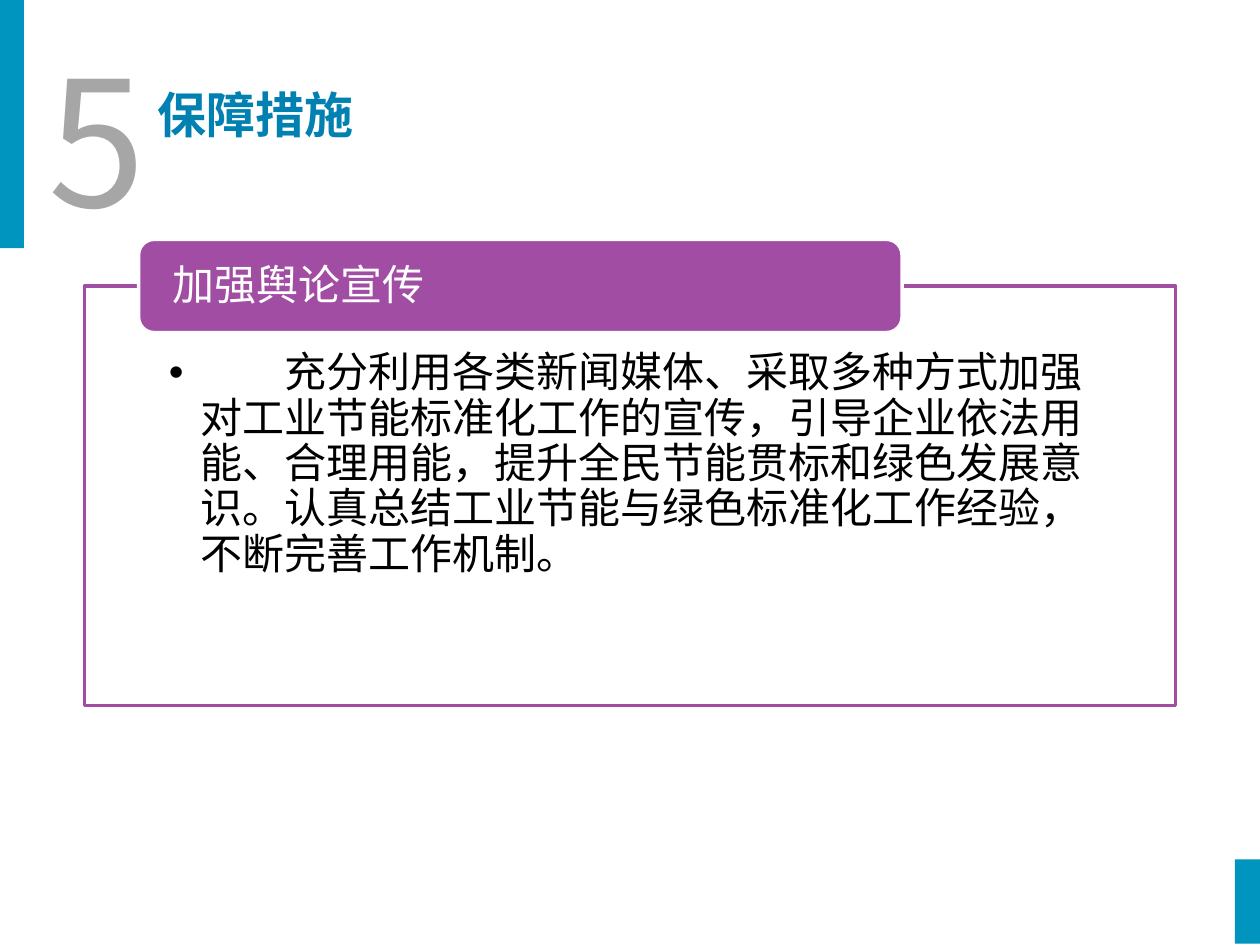
from dataclasses import dataclass

from lxml import etree
from pptx import Presentation
from pptx.dml.color import RGBColor
from pptx.enum import shapes, text
from pptx.oxml.ns import qn
from pptx.util import Inches, Pt


@dataclass(frozen=True)
class Theme:
    teal: str = "0095BE"
    title: str = "0081B2"
    number: str = "A6A6A6"
    purple: str = "A04DA3"
    white: str = "FFFFFF"
    black: str = "000000"
    latin: str = "Calibri"
    cjk: str = "Noto Sans CJK SC"
    number_size: int = 100
    title_size: int = 28
    text_size: int = 24
    line_width: int = 2


THEME = Theme()


def place(shape, box):
    shape.left, shape.top, shape.width, shape.height = map(Inches, box)


def add_block(page, kind, box, fill, line=None):
    block = page.shapes.add_shape(kind, *map(Inches, box))
    block.shadow.inherit = False
    block.fill.solid()
    block.fill.fore_color.rgb = RGBColor.from_string(fill)
    if line:
        block.line.color.rgb = RGBColor.from_string(line)
        block.line.width = Pt(THEME.line_width)
    else:
        block.line.fill.background()
    return block


def set_frame(shape, insets=(0.1, 0.05, 0.1, 0.05), anchor=text.MSO_ANCHOR.TOP):
    frame = shape.text_frame
    frame.word_wrap = True
    frame.auto_size = text.MSO_AUTO_SIZE.NONE
    frame.vertical_anchor = anchor
    (frame.margin_left, frame.margin_top,
     frame.margin_right, frame.margin_bottom) = map(Inches, insets)
    return frame.paragraphs[0]


def add_span(para, words, size, color, font=THEME.latin, bold=False):
    span = para.add_run()
    span.text = words
    span.font.name = font
    span.font.size = Pt(size)
    span.font.bold = bold
    span.font.color.rgb = RGBColor.from_string(color)
    return span


def add_side_bars(page, boxes):
    for box in boxes:
        add_block(page, shapes.MSO_SHAPE.RECTANGLE, box, THEME.teal)


def add_heading(page, box, number, title):
    left, top, width, height = box
    # Large section number
    digit = page.shapes.add_textbox(*map(Inches, (left, top, 0.52, height)))
    add_span(set_frame(digit), number, THEME.number_size, THEME.number, THEME.cjk)
    # Section title
    place(page.shapes.title, (left + 0.86, top + 0.41, width - 0.86, 0.57))
    para = set_frame(page.shapes.title)
    para.alignment = text.PP_ALIGN.JUSTIFY
    add_span(para, title, THEME.title_size, THEME.title, bold=True)


def add_measure(page, box, header, body):
    left, top, width, height = box
    # Outlined panel, slightly transparent
    panel = add_block(page, shapes.MSO_SHAPE.RECTANGLE, box, THEME.white, THEME.purple)
    color = panel.element.spPr.find(qn("a:solidFill"))[0]
    etree.SubElement(color, qn("a:alpha"), val="90000")

    # Bulleted text in the body placeholder, in front of the panel
    holder = page.placeholders[1]
    place(holder, box)
    panel.element.addnext(holder.element)
    para = set_frame(holder, (0.67, 0.52, 0.67, 0.18))
    props = para._p.get_or_add_pPr()
    props.set("marL", str(Inches(0.25)))
    props.set("indent", str(-Inches(0.25)))
    etree.SubElement(props, qn("a:buChar"), char="•")
    para.line_spacing = 0.9
    para.space_before = Pt(0)
    # Two-character first-line indent: one wide space, tracked by one character
    indent = add_span(para, "\u3000", THEME.text_size, THEME.black)
    indent.font._element.set("spc", str(THEME.text_size * 100))
    add_span(para, body, THEME.text_size, THEME.black)

    # Header tab straddling the panel's top edge
    tab_box = (left + 0.43, top - 0.37, 6.06, 0.74)
    add_block(page, shapes.MSO_SHAPE.ROUNDED_RECTANGLE, tab_box,
              THEME.purple, THEME.white)
    label_box = (tab_box[0] + 0.04, tab_box[1] + 0.04, 5.99, 0.67)
    label = page.shapes.add_textbox(*map(Inches, label_box))
    para = set_frame(label, (0.23, 0, 0.23, 0), text.MSO_ANCHOR.MIDDLE)
    para.line_spacing = 0.9
    add_span(para, header, THEME.text_size, THEME.white)


def main():
    deck = Presentation()
    deck.slide_width, deck.slide_height = Inches(10), Inches(7.5)
    page = deck.slides.add_slide(deck.slide_layouts[1])
    add_side_bars(page, [(9.8, 6.82, 0.2, 0.67), (0, 0, 0.19, 1.97)])
    add_heading(page, (0.29, 0.21, 2.66, 1.78), "5", "保障措施")
    add_measure(
        page, (0.67, 2.27, 8.66, 3.33), "加强舆论宣传",
        "充分利用各类新闻媒体、采取多种方式加强对工业节能标准化工作的宣传，"
        "引导企业依法用能、合理用能，提升全民节能贯标和绿色发展意识。"
        "认真总结工业节能与绿色标准化工作经验，不断完善工作机制。")
    deck.save("out.pptx")


if __name__ == "__main__":
    main()
